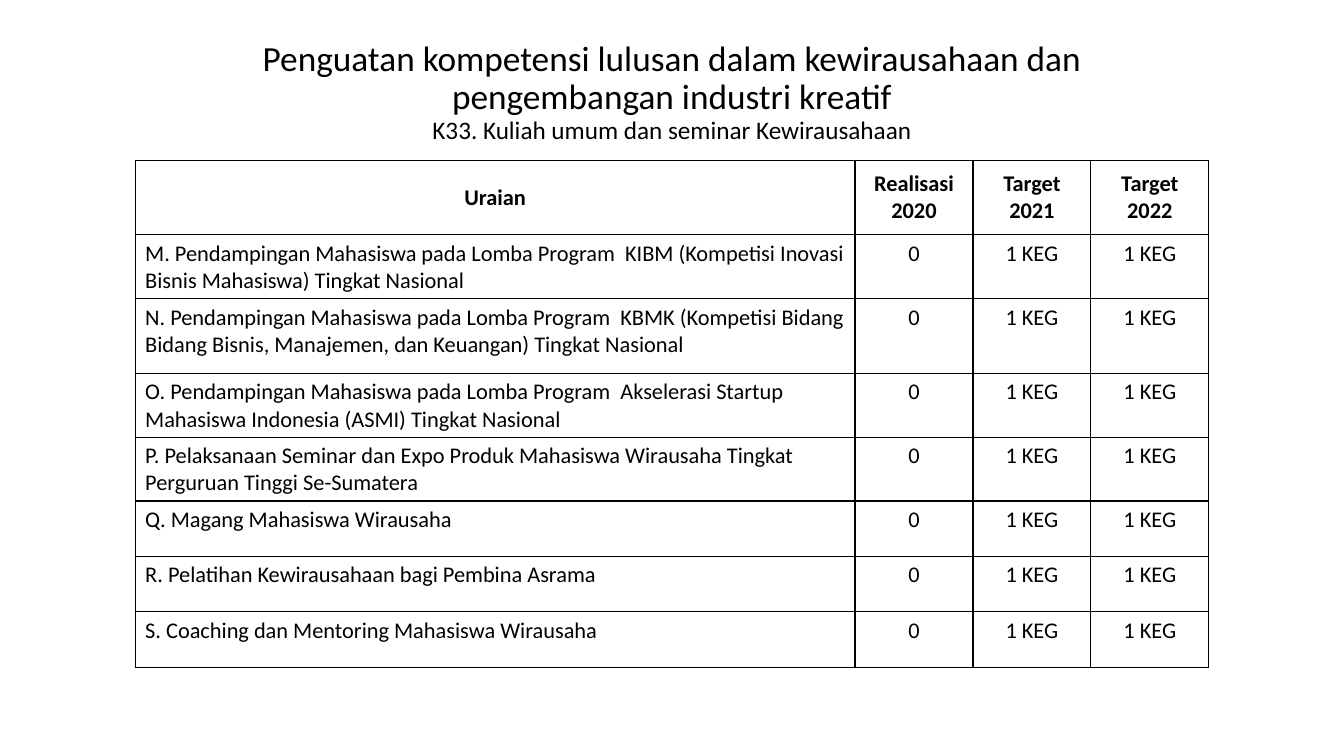
from lxml import etree
from pptx import Presentation
from pptx.dml.color import RGBColor
from pptx.enum import text
from pptx.oxml import ns
from pptx.util import Inches, Pt

COLORS = {"ink": "000000"}
FONT = "Calibri"

TITLE = "Penguatan kompetensi lulusan dalam kewirausahaan dan pengembangan industri kreatif"
SUBTITLE = "K33. Kuliah umum dan seminar Kewirausahaan"
HEADER = ["Uraian", "Realisasi\n2020", "Target\n2021", "Target\n2022"]
ACTIVITIES = [
    "M. Pendampingan Mahasiswa pada Lomba Program  KIBM (Kompetisi Inovasi Bisnis Mahasiswa) Tingkat Nasional",
    "N. Pendampingan Mahasiswa pada Lomba Program  KBMK (Kompetisi Bidang Bidang Bisnis, Manajemen, dan Keuangan) Tingkat Nasional",
    "O. Pendampingan Mahasiswa pada Lomba Program  Akselerasi Startup Mahasiswa Indonesia (ASMI) Tingkat Nasional",
    "P. Pelaksanaan Seminar dan Expo Produk Mahasiswa Wirausaha Tingkat Perguruan Tinggi Se-Sumatera",
    "Q. Magang Mahasiswa Wirausaha",
    "R. Pelatihan Kewirausahaan bagi Pembina Asrama",
    "S. Coaching dan Mentoring Mahasiswa Wirausaha",
]
RESULTS = ["0", "1 KEG", "1 KEG"]
COL_WIDTHS = [7.14, 1.17, 1.17, 1.17]
ROW_HEIGHTS = [0.74, 0.55, 0.74, 0.55, 0.57, 0.55, 0.55, 0.55]


def style_font(font, size, bold=False):
    font.name = FONT
    font.size = Pt(size)
    font.bold = bold
    font.color.rgb = RGBColor.from_string(COLORS["ink"])


def add_title(s, left, top, width, height):
    tf = s.shapes.add_textbox(Inches(left), Inches(top), Inches(width), Inches(height)).text_frame
    tf.word_wrap = True
    tf.vertical_anchor = text.MSO_ANCHOR.MIDDLE
    tf.margin_left = tf.margin_right = Inches(0.5)
    p = tf.paragraphs[0]
    p.text = f"{TITLE}\v{SUBTITLE}"
    p.alignment = text.PP_ALIGN.CENTER
    p.line_spacing = 0.9
    for r, size in zip(p.runs, (25.2, 18)):
        style_font(r.font, size)


def add_borders(cell):
    tcPr = cell._tc.get_or_add_tcPr()
    for side in ("a:lnL", "a:lnR", "a:lnT", "a:lnB"):
        ln = etree.SubElement(tcPr, ns.qn(side), w=str(Pt(1)))
        fill = etree.SubElement(ln, ns.qn("a:solidFill"))
        etree.SubElement(fill, ns.qn("a:srgbClr"), val=COLORS["ink"])


def fill_cell(cell, value, header, centred):
    add_borders(cell)
    cell.fill.background()
    cell.vertical_anchor = text.MSO_ANCHOR.MIDDLE if header else text.MSO_ANCHOR.TOP
    cell.text_frame.text = value
    for p in cell.text_frame.paragraphs:
        p.alignment = text.PP_ALIGN.CENTER if centred else text.PP_ALIGN.LEFT
        for r in p.runs:
            style_font(r.font, 16, bold=header)


def add_targets(s, left, top, width, height):
    rows = [HEADER] + [[activity] + RESULTS for activity in ACTIVITIES]
    table = s.shapes.add_table(len(rows), len(HEADER), Inches(left), Inches(top),
                               Inches(width), Inches(height)).table
    table.first_row = table.horz_banding = False
    for column, col_width in zip(table.columns, COL_WIDTHS):
        column.width = Inches(col_width)
    for i, values in enumerate(rows):
        table.rows[i].height = Inches(ROW_HEIGHTS[i])
        for j, value in enumerate(values):
            fill_cell(table.cell(i, j), value, header=i == 0, centred=i == 0 or j > 0)


def main():
    prs = Presentation()
    prs.slide_width, prs.slide_height = Inches(13.33), Inches(7.5)
    s = prs.slides.add_slide(prs.slide_layouts[6])
    # Heading
    add_title(s, 1.38, 0.38, 10.57, 1.08)
    # Activities with yearly targets
    add_targets(s, 1.34, 1.59, sum(COL_WIDTHS), sum(ROW_HEIGHTS))
    prs.save("out.pptx")


if __name__ == "__main__":
    main()
